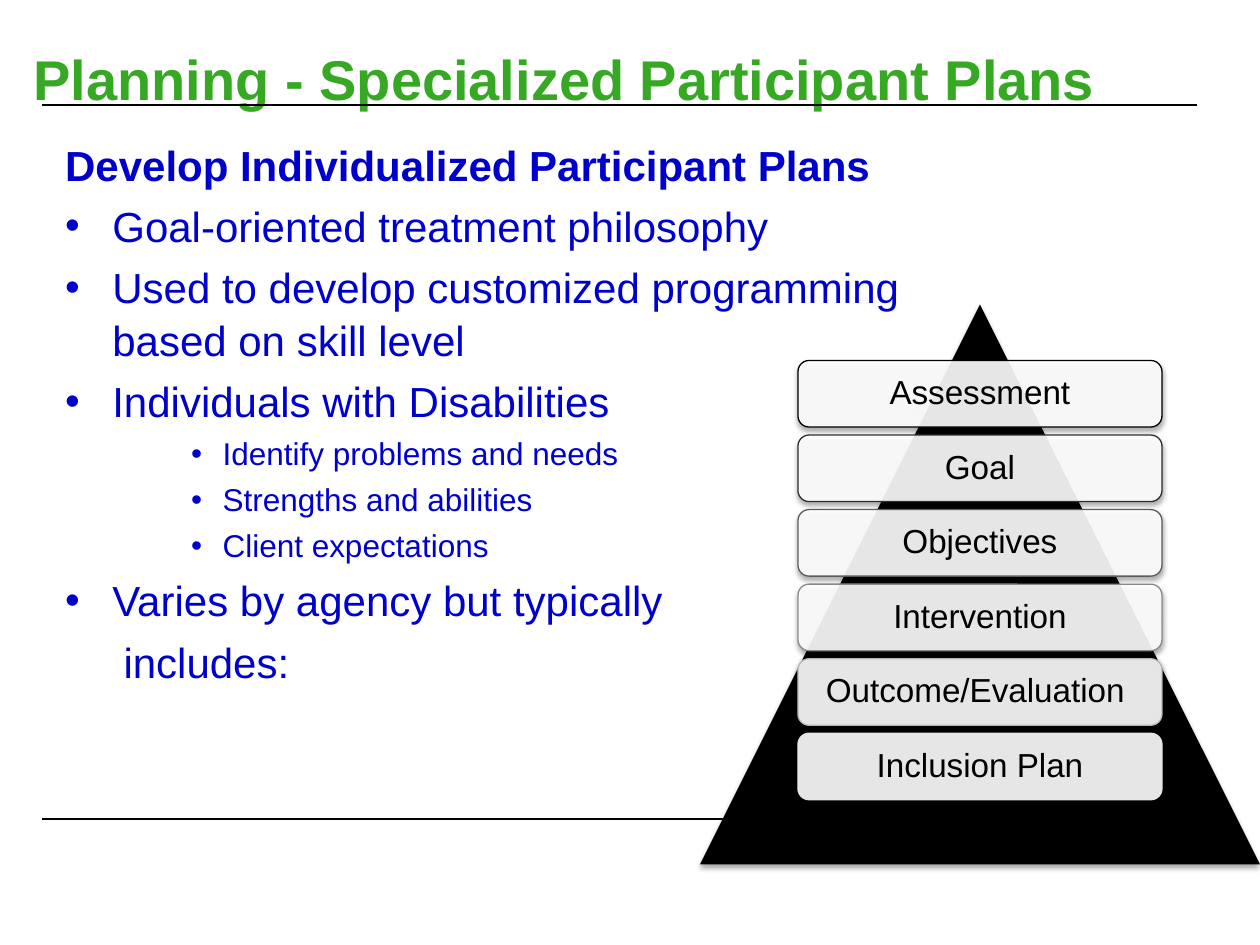
import pptx
import pptx.dml.color
import pptx.enum.shapes
import pptx.enum.text
import pptx.oxml
import pptx.oxml.ns
import pptx.util
from lxml import etree

Pt = pptx.util.Pt
SHAPES = pptx.enum.shapes.MSO_SHAPE
ALIGN = pptx.enum.text.PP_ALIGN
ANCHOR = pptx.enum.text.MSO_ANCHOR
A_NS = pptx.oxml.ns.nsdecls("a")

BLUE, GREEN, BLACK, WHITE = "0000CC", "37A824", "000000", "FFFFFF"

# (text, kind of line)
PLAN_POINTS = [
    ("Develop Individualized Participant Plans", "heading"),
    ("Goal-oriented treatment philosophy", "point"),
    ("Used to develop customized programming based on skill level", "point"),
    ("Individuals with Disabilities", "point"),
    ("Identify problems and needs", "detail"),
    ("Strengths and abilities", "detail"),
    ("Client expectations", "detail"),
    ("Varies by agency but typically", "point"),
    ("includes:", "continued"),
]
LINE_KINDS = {
    "heading": dict(size=24, bold=True),
    "point": dict(size=24, margin=27, hanging=27, bullet="•", before=4.8),
    "detail": dict(size=18, margin=90, hanging=18, bullet="•", before=3.6, level=2),
    "continued": dict(size=24, margin=33.4, before=4.8),
}
# (step, outline colour), from the top of the pyramid down
STEPS = [
    ("Assessment", "000000"),
    ("Goal", "2E2E2E"),
    ("Objectives", "5B5B5B"),
    ("Intervention", "898989"),
    ("Outcome/Evaluation ", "B7B7B7"),
    ("Inclusion Plan", "E5E5E5"),
]


def rgb(hex_colour):
    return pptx.dml.color.RGBColor.from_string(hex_colour)


def place(item, left, top, width, height):
    item.left, item.top = Pt(left), Pt(top)
    item.width, item.height = Pt(width), Pt(height)


def write(paragraph, text, size=24, colour=BLACK, bold=False, align=ALIGN.LEFT,
          margin=0, hanging=0, bullet=None, before=0, spacing=1.0, level=0):
    paragraph.text = text
    paragraph.level = level
    paragraph.alignment = align
    paragraph.line_spacing = spacing
    paragraph.space_before = Pt(before)
    # Indents and bullet
    properties = paragraph._p.get_or_add_pPr()
    properties.set("marL", str(Pt(margin)))
    properties.set("indent", str(-Pt(hanging)))
    if bullet:
        mark = f'<a:buChar {A_NS} char="{bullet}"/>'
    else:
        mark = f"<a:buNone {A_NS}/>"
    properties.append(pptx.oxml.parse_xml(mark))
    # Character format
    font = paragraph.runs[0].font
    font.name, font.size, font.bold = "Arial", Pt(size), bold
    font.color.rgb = rgb(colour)


def add_rule(slide, height):
    rule = slide.shapes.add_connector(
        pptx.enum.shapes.MSO_CONNECTOR.STRAIGHT,
        Pt(24), Pt(height), Pt(684), Pt(height))
    rule.line.color.rgb = rgb(BLACK)
    rule.line.width = Pt(0.75)
    etree.SubElement(rule._element.spPr, pptx.oxml.ns.qn("a:effectLst"))


def add_soft_shadow(shape):
    shape._element.spPr.append(pptx.oxml.parse_xml(
        f'<a:effectLst {A_NS}><a:outerShdw blurRad="{Pt(3.1)}" dist="{Pt(1.8)}" '
        'dir="5400000" rotWithShape="0"><a:srgbClr val="000000">'
        '<a:alpha val="35000"/></a:srgbClr></a:outerShdw></a:effectLst>'))


def add_filled(group, kind, box, fill):
    shape = group.shapes.add_shape(kind, *(Pt(length) for length in box))
    shape.fill.solid()
    shape.fill.fore_color.rgb = rgb(fill)
    shape.line.fill.background()
    return shape


def add_step(group, top, text, outline):
    step = add_filled(group, SHAPES.ROUNDED_RECTANGLE, (456, top, 208, 38), WHITE)
    fill_colour = step._element.spPr.find(".//" + pptx.oxml.ns.qn("a:srgbClr"))
    etree.SubElement(fill_colour, pptx.oxml.ns.qn("a:alpha"), val="90000")
    step.line.color.rgb = rgb(outline)
    step.line.width = Pt(0.75)
    add_soft_shadow(step)
    frame = step.text_frame
    frame.word_wrap = True
    frame.vertical_anchor = ANCHOR.MIDDLE
    write(frame.paragraphs[0], text, size=19, align=ALIGN.CENTER, spacing=0.9)


def fill_title(title):
    place(title, 12, 24, 708, 72)
    frame = title.text_frame
    frame.auto_size = pptx.enum.text.MSO_AUTO_SIZE.NONE
    frame.vertical_anchor = ANCHOR.TOP
    frame.margin_top = Pt(1.5)
    write(frame.paragraphs[0], "Planning - Specialized Participant Plans",
          size=32, colour=GREEN, bold=True)


def fill_points(body):
    place(body, 30, 60, 510, 360)
    frame = body.text_frame
    frame.auto_size = pptx.enum.text.MSO_AUTO_SIZE.NONE
    frame.margin_top = Pt(18)
    for number, (text, kind) in enumerate(PLAN_POINTS):
        paragraph = frame.add_paragraph() if number else frame.paragraphs[0]
        write(paragraph, text, colour=BLUE, spacing=1.05, **LINE_KINDS[kind])


def add_pyramid(slide):
    pyramid = slide.shapes.add_group_shape()
    triangle = add_filled(pyramid, SHAPES.ISOSCELES_TRIANGLE,
                          (400, 174, 320, 320), BLACK)
    add_soft_shadow(triangle)
    for number, (text, outline) in enumerate(STEPS):
        add_step(pyramid, 206 + 42.6 * number, text, outline)


def main():
    deck = pptx.Presentation()
    deck.slide_width, deck.slide_height = Pt(720), Pt(540)
    slide = deck.slides.add_slide(deck.slide_layouts[1])
    # Rules above and below the content
    for height in (60, 468):
        add_rule(slide, height)
    # Title, list and planning pyramid
    fill_title(slide.shapes.title)
    fill_points(slide.placeholders[1])
    add_pyramid(slide)
    deck.save("out.pptx")


if __name__ == "__main__":
    main()
